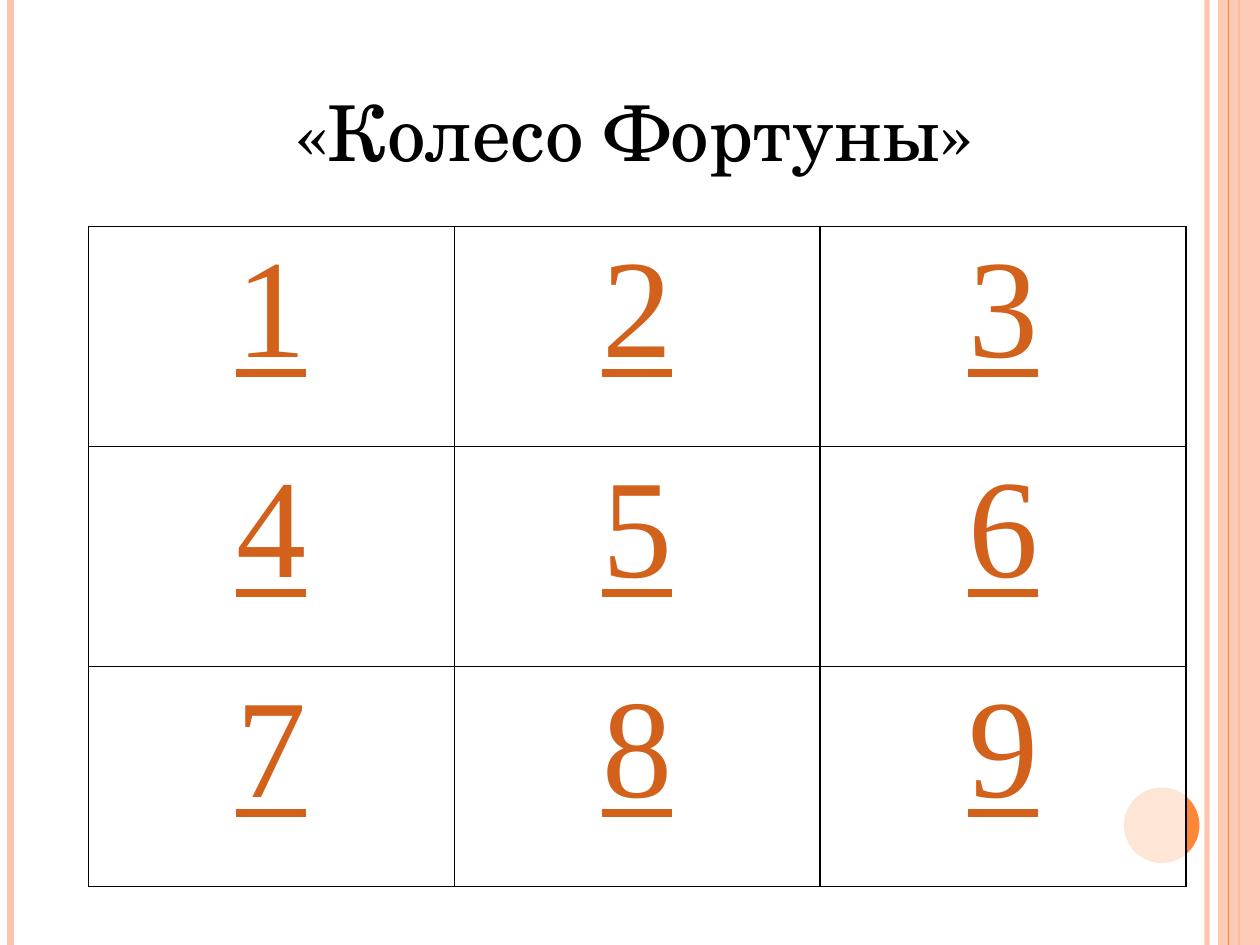
"""Build the «Колесо Фортуны» slide: a three by three grid of numbers."""
from lxml.etree import SubElement
from pptx import Presentation
from pptx.dml.color import RGBColor
from pptx.enum.shapes import MSO_CONNECTOR, MSO_SHAPE
from pptx.enum.text import MSO_ANCHOR, PP_ALIGN
from pptx.oxml import parse_xml
from pptx.oxml.ns import nsdecls, qn
from pptx.util import Pt

BLACK = RGBColor(0, 0, 0)
WHITE = RGBColor(0xFF, 0xFF, 0xFF)
PEACH = RGBColor(0xFE, 0xC3, 0xAE)
ORANGE = RGBColor(0xFE, 0x86, 0x37)
RUST = RGBColor(0xD2, 0x61, 0x1C)

HEAD = {"name": "TeX Gyre Schola", "size": Pt(44), "bold": False}
DIGIT = {"name": "Times New Roman", "size": Pt(80), "underline": True}


def fade(props, part):
    color = next(props.iter(qn("a:srgbClr")))
    SubElement(color, qn("a:alpha")).set("val", str(part * 1000))


def write(frame, text, style, color):
    para = frame.paragraphs[0]
    para.alignment = PP_ALIGN.CENTER
    run = para.add_run()
    run.text = text
    for key, value in style.items():
        setattr(run.font, key, value)
    run.font.color.rgb = color


deck = Presentation()
deck.slide_width, deck.slide_height = Pt(720), Pt(540)
slide = deck.slides.add_slide(deck.slide_layouts[5])
shapes = slide.shapes

for x, color, width, part in [
    (689.75, PEACH, 3, 93),
    (6, PEACH, 4.5, 100),
    (708, ORANGE, 1.5, 100),
    (702, ORANGE, 0.75, 100),
]:
    line = shapes.add_connector(MSO_CONNECTOR.STRAIGHT, Pt(x), 0, Pt(x), Pt(540))
    line.line.color.rgb = color
    line.line.width = Pt(width)
    props = line._element.spPr
    SubElement(props, qn("a:effectLst"))
    if part < 100:
        fade(props, part)

band = shapes.add_shape(MSO_SHAPE.RECTANGLE, Pt(696), 0, Pt(24), Pt(540))
disc = shapes.add_shape(MSO_SHAPE.OVAL, Pt(642.25), Pt(450), Pt(43.2), Pt(43.2))
for shape, color in [(band, PEACH), (disc, ORANGE)]:
    shape.shadow.inherit = False
    shape.fill.solid()
    shape.fill.fore_color.rgb = color
    shape.line.fill.background()
fade(band._element.spPr, 87)
line._element.addprevious(band._element)

title = shapes.title
title.left, title.top, title.width, title.height = Pt(78.5), Pt(44.6), Pt(568), Pt(60.5)
title.text_frame.vertical_anchor = MSO_ANCHOR.MIDDLE
write(title.text_frame, "«Колесо Фортуны»", HEAD, BLACK)

frame = shapes.add_table(3, 3, Pt(50.5), Pt(129.5), Pt(627.3), Pt(377.1))
grid = frame.table
grid.first_row = grid.horz_banding = False
for num, cell in enumerate(grid.iter_cells(), 1):
    write(cell.text_frame, str(num), DIGIT, RUST)
    cell.fill.solid()
    cell.fill.fore_color.rgb = WHITE
    props = cell._tc.get_or_add_tcPr()
    fade(props, 80)
    for spot, side in enumerate(["lnL", "lnR", "lnT", "lnB"]):
        edge = parse_xml(
            f'<a:{side} {nsdecls("a")} w="12700"><a:solidFill>'
            f'<a:srgbClr val="{BLACK}"/></a:solidFill></a:{side}>'
        )
        props.insert(spot, edge)

deck.save("out.pptx")
